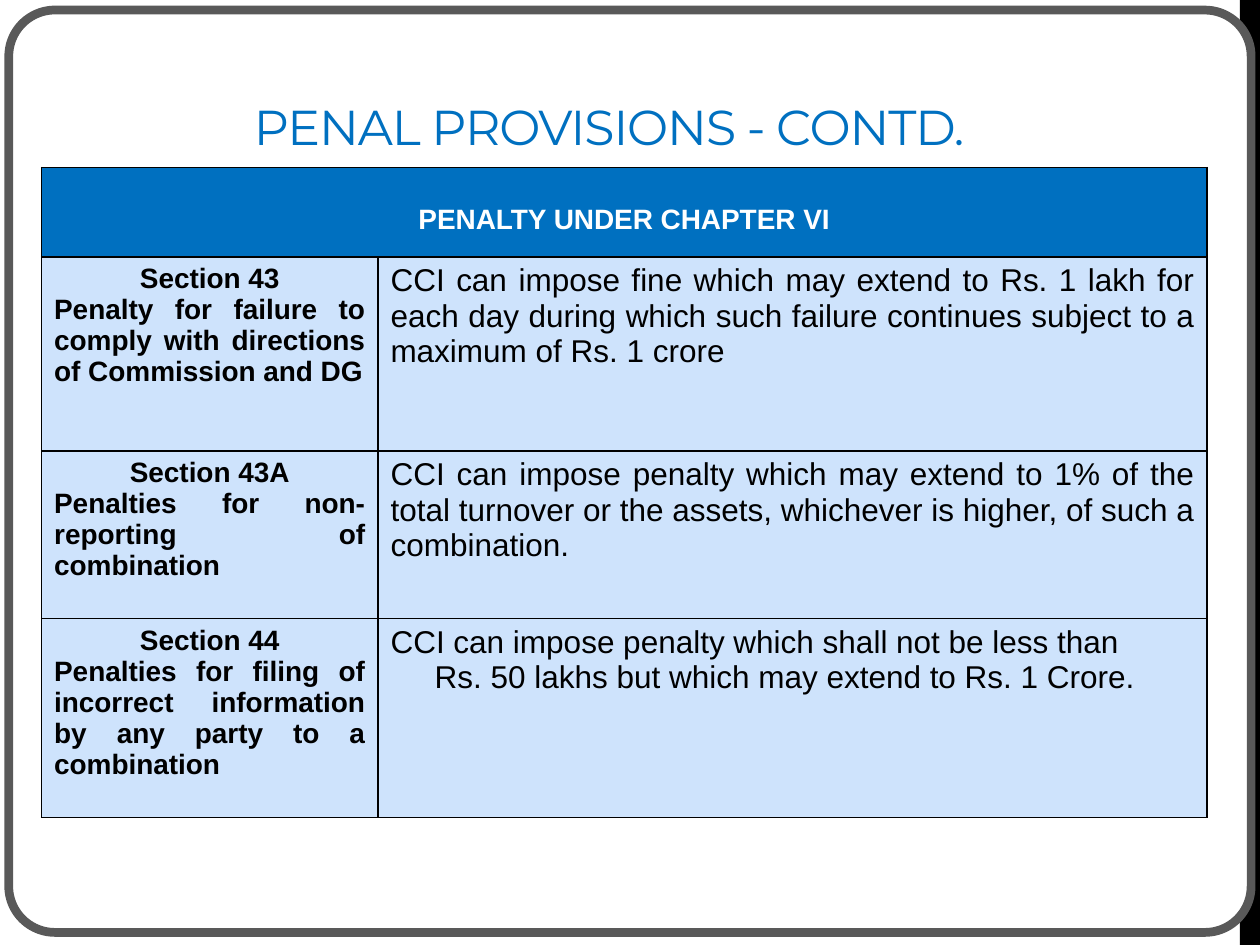
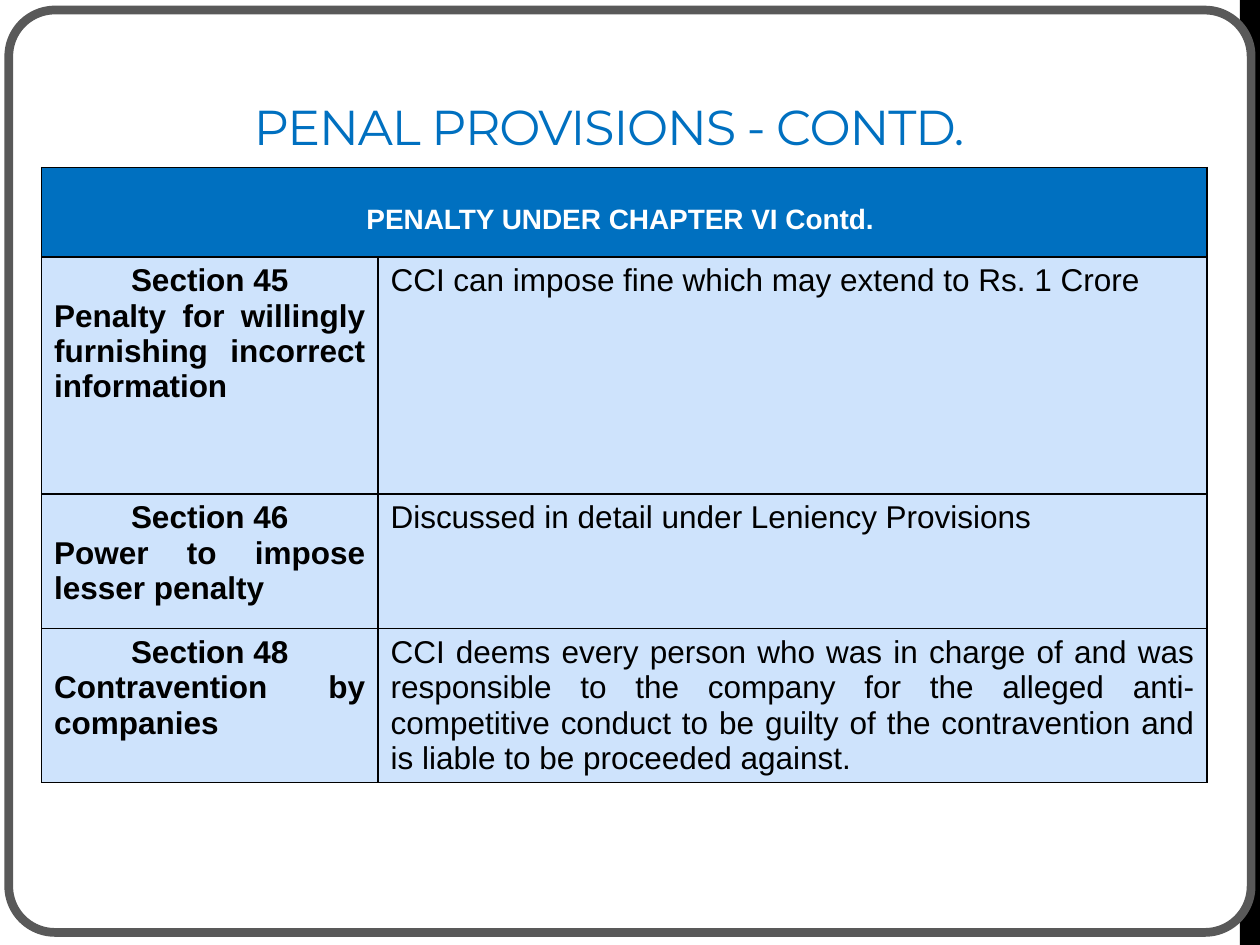
from dataclasses import dataclass

from lxml import etree
from pptx import Presentation
from pptx.dml.color import RGBColor
from pptx.enum.shapes import MSO_SHAPE
from pptx.enum.text import MSO_ANCHOR, MSO_AUTO_SIZE, PP_ALIGN
from pptx.oxml.ns import qn
from pptx.slide import Slide, SlideLayout
from pptx.table import _Cell
from pptx.text.text import _Paragraph
from pptx.util import Inches, Pt

BLUE = RGBColor(0x00, 0x70, 0xC0)
PALE_BLUE = RGBColor(0xCE, 0xE3, 0xFC)
BLACK = RGBColor(0x00, 0x00, 0x00)
WHITE = RGBColor(0xFF, 0xFF, 0xFF)
GREY = RGBColor(0x59, 0x59, 0x59)

TITLE_FONT = "Montserrat"
TABLE_FONT = "Arial"
TITLE = "PENAL PROVISIONS - CONTD. "
TITLE_ONLY_LAYOUT = 5

RECTANGLE = MSO_SHAPE.RECTANGLE
ROUNDED_RECTANGLE = MSO_SHAPE.ROUNDED_RECTANGLE
CENTER = PP_ALIGN.CENTER
JUSTIFY = PP_ALIGN.JUSTIFY
LEFT = PP_ALIGN.LEFT
BOTTOM = MSO_ANCHOR.BOTTOM
NO_AUTOFIT = MSO_AUTO_SIZE.NONE

COLUMN_WIDTHS = (2.67, 6.58)
HEADER_HEIGHT = 0.71
HANGING_INDENT = 0.35


@dataclass(frozen=True)
class Provision:
    section: str
    offence: str
    penalty: str
    height: float
    hanging: bool = False


@dataclass(frozen=True)
class PenaltySlide:
    heading: str
    section_size: int
    provisions: tuple[Provision, ...]


PENALTY_SLIDES = (
    PenaltySlide("PENALTY UNDER CHAPTER VI", 16, (
        Provision(
            "Section 43",
            "Penalty for failure to comply with directions of Commission and DG",
            "CCI can impose fine which may extend to Rs. 1 lakh for each day during "
            "which such failure continues subject to a maximum of Rs. 1 crore",
            1.54),
        Provision(
            "Section 43A",
            "Penalties for non-reporting of combination",
            "CCI can impose penalty which may extend to 1% of the total turnover or "
            "the assets, whichever is higher, of such a combination.",
            1.33),
        Provision(
            "Section 44",
            "Penalties for filing of incorrect information by any party to a combination",
            "CCI can impose penalty which shall not be less than\n"
            "Rs. 50 lakhs but which may extend to Rs. 1 Crore.",
            1.58, hanging=True),
    )),
    PenaltySlide("PENALTY UNDER CHAPTER VI Contd. ", 18, (
        Provision(
            "Section 45",
            "Penalty for willingly furnishing incorrect information",
            "CCI can impose fine which may extend to Rs. 1 Crore",
            1.88),
        Provision(
            "Section 46",
            "Power to impose lesser penalty",
            "Discussed in detail under Leniency Provisions",
            1.07),
        Provision(
            "Section 48",
            "Contravention by companies",
            "CCI deems every person who was in charge of and was responsible to the "
            "company for the alleged anti-competitive conduct to be guilty of the "
            "contravention and is liable to be proceeded against.",
            1.22),
    )),
)


def style_layout(layout: SlideLayout, slide: Slide) -> None:
    """Draw the frame on a slide, move it to the layout and place the title."""
    side_bands = [
        slide.shapes.add_shape(RECTANGLE, Inches(9.84), Inches(top), Inches(0.16), Inches(height))
        for top, height in ((0, 1.5), (1.5, 6))
    ]
    for band in side_bands:
        band.fill.solid()
        band.fill.fore_color.rgb = BLACK
        band.line.fill.background()

    frame = slide.shapes.add_shape(
        ROUNDED_RECTANGLE, Inches(0.07), Inches(0.08), Inches(9.86), Inches(7.32))
    frame.adjustments[0] = 0.05
    frame.fill.solid()
    frame.fill.fore_color.rgb = WHITE
    frame.line.color.rgb = GREY
    frame.line.width = Pt(5)

    for position, shape in enumerate((*side_bands, frame)):
        shape.shadow.inherit = False
        shape.element.nvSpPr.cNvPr.set("id", str(20 + position))
        layout.shapes.element.insert(2 + position, shape.element)

    title = layout.placeholders[0]
    title.left, title.top = Inches(0.92), Inches(0.17)
    title.width, title.height = Inches(7.92), Inches(1.08)
    title.text_frame.vertical_anchor = BOTTOM
    title.text_frame.auto_size = NO_AUTOFIT
    title.text_frame.margin_bottom = Inches(0.02)


def add_text(paragraph: _Paragraph, text: str, size: int, color: RGBColor,
             alignment: PP_ALIGN, bold: bool = False, font: str = TABLE_FONT) -> None:
    """Add one run for each line of the text."""
    paragraph.alignment = alignment
    for number, line in enumerate(text.split("\n")):
        if number:
            paragraph.add_line_break()
        run = paragraph.add_run()
        run.text = line
        run.font.name = font
        run.font.size = Pt(size)
        run.font.bold = bold
        run.font.color.rgb = color


def style_cell(cell: _Cell, color: RGBColor) -> None:
    """Give a cell black borders and a plain fill."""
    properties = cell._tc.get_or_add_tcPr()
    for side in ("a:lnL", "a:lnR", "a:lnT", "a:lnB"):
        border = etree.SubElement(properties, qn(side), w=str(Pt(1)))
        fill = etree.SubElement(border, qn("a:solidFill"))
        etree.SubElement(fill, qn("a:srgbClr"), val=str(BLACK))
    cell.fill.solid()
    cell.fill.fore_color.rgb = color


def add_title(slide: Slide) -> None:
    paragraph = slide.shapes.title.text_frame.paragraphs[0]
    add_text(paragraph, TITLE, 28, BLUE, CENTER, font=TITLE_FONT)
    for run in paragraph.runs:
        run._r.get_or_add_rPr().set("spc", "-60")


def add_penalty_table(slide: Slide, content: PenaltySlide) -> None:
    heights = [HEADER_HEIGHT, *(provision.height for provision in content.provisions)]
    table = slide.shapes.add_table(
        len(heights), len(COLUMN_WIDTHS), Inches(0.33), Inches(1.33),
        Inches(sum(COLUMN_WIDTHS)), Inches(sum(heights))).table
    for column, width in zip(table.columns, COLUMN_WIDTHS):
        column.width = Inches(width)
    for row_number, (row, height) in enumerate(zip(table.rows, heights)):
        row.height = Inches(height)
        for cell in row.cells:
            style_cell(cell, PALE_BLUE if row_number else BLUE)

    # Heading across both columns
    heading = table.cell(0, 0)
    heading.merge(table.cell(0, 1))
    heading.margin_top = Inches(0.29)
    add_text(heading.text_frame.paragraphs[0], content.heading, 16, WHITE, CENTER, bold=True)

    # Section and offence on the left, penalty on the right
    for row_number, provision in enumerate(content.provisions, start=1):
        section_frame = table.cell(row_number, 0).text_frame
        add_text(section_frame.paragraphs[0], provision.section,
                 content.section_size, BLACK, CENTER, bold=True)
        add_text(section_frame.add_paragraph(), provision.offence,
                 content.section_size, BLACK, JUSTIFY, bold=True)

        penalty = table.cell(row_number, 1).text_frame.paragraphs[0]
        if provision.hanging:
            paragraph_properties = penalty._p.get_or_add_pPr()
            paragraph_properties.set("marL", str(Inches(HANGING_INDENT)))
            paragraph_properties.set("indent", str(-Inches(HANGING_INDENT)))
        add_text(penalty, provision.penalty, 18, BLACK,
                 LEFT if provision.hanging else JUSTIFY)


def main() -> None:
    presentation = Presentation()
    presentation.slide_width = Inches(10)
    presentation.slide_height = Inches(7.5)
    layout = presentation.slide_layouts[TITLE_ONLY_LAYOUT]
    slides = [presentation.slides.add_slide(layout) for _ in PENALTY_SLIDES]
    style_layout(layout, slides[0])
    for slide, content in zip(slides, PENALTY_SLIDES):
        add_title(slide)
        add_penalty_table(slide, content)
    presentation.save("out.pptx")


if __name__ == "__main__":
    main()
